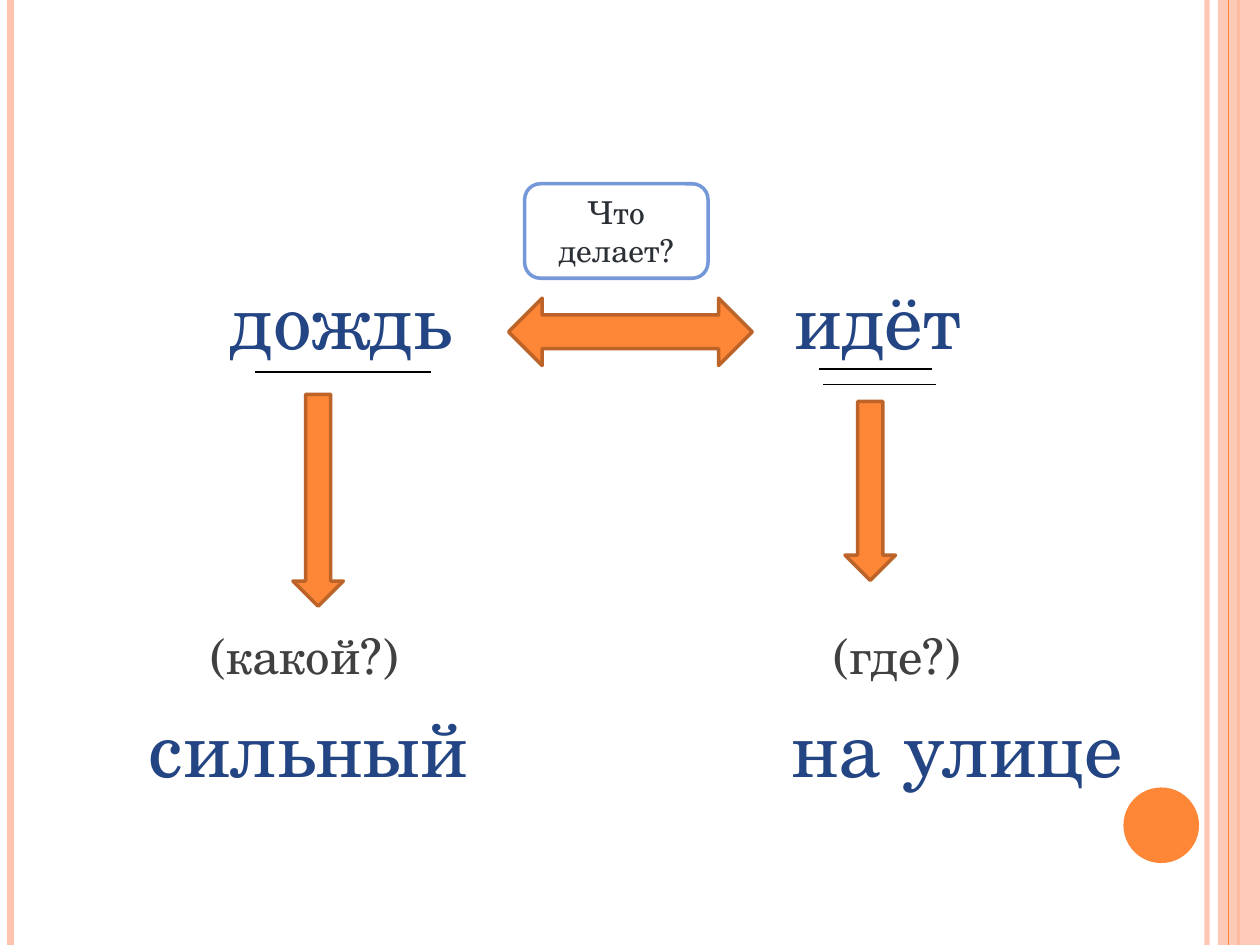
import pptx
import pptx.dml.color
import pptx.enum.shapes
import pptx.enum.text
import pptx.oxml
import pptx.oxml.ns
import pptx.util

Pt = pptx.util.Pt
RGB = pptx.dml.color.RGBColor
KIND = pptx.enum.shapes.MSO_SHAPE
ANCHOR = pptx.enum.text.MSO_ANCHOR
ALIGN = pptx.enum.text.PP_ALIGN
qn = pptx.oxml.ns.qn

PEACH = RGB(0xFE, 0xC3, 0xAE)
ORANGE = RGB(0xFE, 0x86, 0x37)
RUST = RGB(0xBC, 0x63, 0x29)
NAVY = RGB(0x24, 0x45, 0x83)
BLUE = RGB(0x75, 0x98, 0xD9)
GREY = RGB(0x40, 0x40, 0x40)
DARK = RGB(0x2B, 0x2F, 0x36)
WHITE = RGB(0xFF, 0xFF, 0xFF)
BLACK = RGB(0, 0, 0)


class Board:
    """Draw styled elements on one slide, with lengths in points."""

    font = "TeX Gyre Schola"
    frame = {"word_wrap": True, "vertical_anchor": ANCHOR.MIDDLE}

    def __init__(self, slide):
        self.slide = slide
        self.shapes = slide.shapes

    def apply(self, target, values):
        for name, value in values.items():
            setattr(target, name, value)

    def fade(self, part, alpha):
        color = next(part.iter(qn("a:srgbClr")))
        pptx.oxml.ns  # namespace helpers
        color.append(color.makeelement(qn("a:alpha"), {"val": str(alpha * 1000)}))

    def line(self, start, end, color, width, alpha=100):
        rule = self.shapes.add_connector(
            pptx.enum.shapes.MSO_CONNECTOR.STRAIGHT, *map(Pt, start + end))
        rule.line.color.rgb = color
        rule.line.width = Pt(width)
        props = rule._element.spPr
        if alpha < 100:
            self.fade(props, alpha)
        props.append(props.makeelement(qn("a:effectLst"), {}))

    def shape(self, kind, box, fill, edge=None, alpha=100):
        item = self.shapes.add_shape(kind, *map(Pt, box))
        item.shadow.inherit = False
        item.fill.solid()
        item.fill.fore_color.rgb = fill
        if alpha < 100:
            self.fade(item._element.spPr, alpha)
        if edge is None:
            item.line.fill.background()
        else:
            item.line.color.rgb = edge
            item.line.width = Pt(2)
        return item

    def run(self, para, text, size, color):
        piece = para.add_run()
        piece.text = text
        self.apply(piece.font, {"name": self.font, "size": Pt(size)})
        piece.font.color.rgb = color

    def label(self, item, text, size, color):
        self.apply(item.text_frame, self.frame)
        para = item.text_frame.paragraphs[0]
        para.alignment = ALIGN.CENTER
        self.run(para, text, size, color)

    def rows(self, box, rows, gap=0):
        frame = self.shapes.add_textbox(*map(Pt, box)).text_frame
        self.apply(frame, self.frame)
        for index, (words, stops, size, color) in enumerate(rows):
            para = frame.add_paragraph() if index else frame.paragraphs[0]
            para.space_before = Pt(gap)
            self.tabs(para, stops)
            self.run(para, "\t", 44, color)
            self.run(para, "\t".join(words), size, color)

    def tabs(self, para, stops):
        props = para._p.get_or_add_pPr()
        tabs = props.makeelement(qn("a:tabLst"), {})
        for stop in stops:
            tabs.append(tabs.makeelement(
                qn("a:tab"), {"pos": str(int(Pt(stop))), "algn": "l"}))
        props.append(tabs)


def main():
    deck = pptx.Presentation()
    deck.slide_width, deck.slide_height = Pt(720), Pt(540)
    board = Board(deck.slides.add_slide(deck.slide_layouts[6]))

    for x, color, width, alpha in ((689.8, PEACH, 3, 93), (6, PEACH, 4.5, 100),
                                   (707.8, ORANGE, 1.5, 100)):
        board.line((x, 0), (x, 540), color, width, alpha)
    board.shape(KIND.RECTANGLE, (696, 0, 24, 540), PEACH, alpha=87)
    board.line((702, 0), (702, 540), ORANGE, 0.75)
    board.shape(KIND.OVAL, (642, 450, 43.2, 43.2), ORANGE)

    board.rows((40.3, 48.2, 567.4, 267.8),
               [(("дождь", "идёт"), (84.5, 406.5), 44, NAVY)])
    board.rows((41, 323.3, 632.9, 147.6),
               [(("(какой?)", "(где?)"), (72, 428), 28, GREY),
                (("сильный", "на улице"), (37, 404), 44, NAVY)], 6)

    for x, y, width in ((145.6, 212.5, 100.8), (468, 211, 64.8), (470.3, 219.7, 64.8)):
        board.line((x, y), (x + width, y), BLACK, 1)
    for kind, box in ((KIND.LEFT_RIGHT_ARROW, (290.6, 170.4, 139.3, 38.5)),
                      (KIND.DOWN_ARROW, (167.4, 225.4, 28.8, 121)),
                      (KIND.DOWN_ARROW, (482.9, 229.4, 28.8, 102.2))):
        board.shape(kind, box, ORANGE, RUST)
    query = board.shape(KIND.ROUNDED_RECTANGLE, (299.8, 105, 104.8, 54), WHITE, BLUE)
    board.label(query, "Что делает?", 18, DARK)

    deck.save("out.pptx")


if __name__ == "__main__":
    main()
